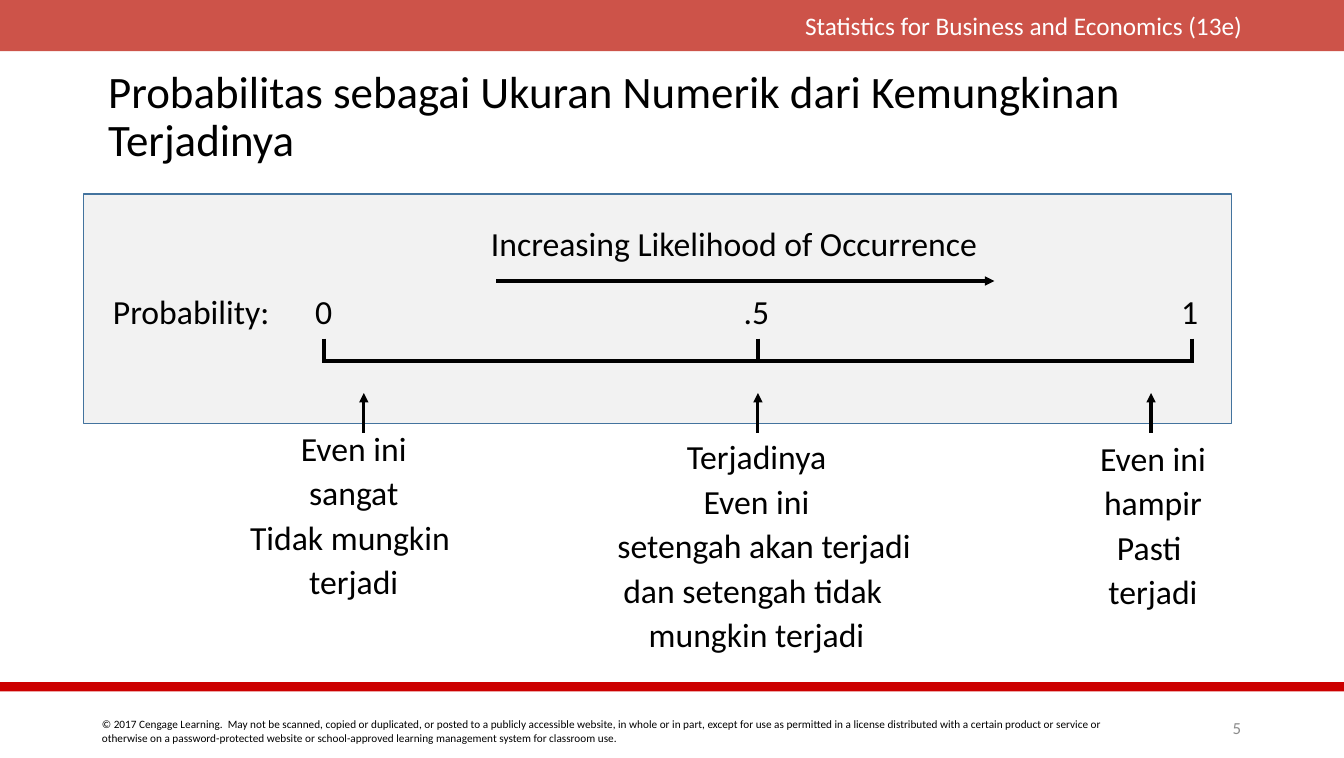
from lxml.etree import SubElement
from pptx import Presentation
from pptx.dml.color import RGBColor
from pptx.enum.shapes import MSO_CONNECTOR as Connector, MSO_SHAPE as Shape
from pptx.enum.text import MSO_ANCHOR as Anchor, PP_ALIGN as Align
from pptx.oxml.ns import qn
from pptx.util import Pt

SLIDE_WIDTH, SLIDE_HEIGHT = 957.6, 540


def color(hex_code):
    return RGBColor.from_string(hex_code)


class ScaleSlide:
    """Holds the style and the slide; lengths are in points."""
    font = "Calibri"
    ink = "000000"

    def __init__(self, slide):
        self.shapes = slide.shapes

    def rect(self, left, top, width, height, fill, outline=None, opacity=100):
        box = self.shapes.add_shape(Shape.RECTANGLE, Pt(left), Pt(top), Pt(width), Pt(height))
        box.shadow.inherit = False
        box.fill.solid()
        box.fill.fore_color.rgb = color(fill)
        if opacity < 100:
            tint = box.fill._xPr.find(qn("a:solidFill"))[0]
            SubElement(tint, qn("a:alpha"), val=str(opacity * 1000))
        if outline:
            box.line.color.rgb = color(outline)
            box.line.width = Pt(1)
        else:
            box.line.fill.background()

    def line(self, x1, y1, x2, y2, weight=3, arrow=False):
        rule = self.shapes.add_connector(Connector.STRAIGHT, Pt(x1), Pt(y1), Pt(x2), Pt(y2))
        rule.line.color.rgb = color(self.ink)
        rule.line.width = Pt(weight)
        if arrow:
            SubElement(rule.line._get_or_add_ln(), qn("a:tailEnd"), type="triangle")
        SubElement(rule._element.spPr, qn("a:effectLst"))

    def text(self, left, top, width, height, lines, size=24, ink=ink,
             align=Align.LEFT, anchor=Anchor.TOP, spacing=1.0, shifts=None):
        frame = self.shapes.add_textbox(Pt(left), Pt(top), Pt(width), Pt(height)).text_frame
        frame.word_wrap = True
        frame.vertical_anchor = anchor
        for index, words in enumerate(lines):
            paragraph = frame.add_paragraph() if index else frame.paragraphs[0]
            paragraph.alignment = align
            paragraph.line_spacing = spacing
            # A positive shift indents on the left, a negative one on the right
            shift = (shifts or {}).get(index, 0)
            margins = paragraph._p.get_or_add_pPr()
            margins.set("marL", str(Pt(max(shift, 0))))
            margins.set("marR", str(Pt(max(-shift, 0))))
            run = paragraph.add_run()
            run.text = words
            run.font.name = self.font
            run.font.size = Pt(size)
            run.font.color.rgb = color(ink)

    def caption(self, center_x, center_y, width, lines, shifts):
        height = 150
        self.text(center_x - width / 2, center_y - height / 2, width, height, lines,
                  align=Align.CENTER, anchor=Anchor.MIDDLE, spacing=1.1, shifts=shifts)


def main():
    deck = Presentation()
    deck.slide_width, deck.slide_height = Pt(SLIDE_WIDTH), Pt(SLIDE_HEIGHT)
    page = ScaleSlide(deck.slides.add_slide(deck.slide_layouts[6]))

    # Header band, footer rule and footer
    page.rect(0, 0, SLIDE_WIDTH, 36.5, "BF2317", opacity=78)
    page.text(490.3, 3.6, 401.8, 29, ["Statistics for Business and Economics (13e)"],
              size=18, ink="FFFFFF", align=Align.RIGHT)
    page.rect(0, 486, SLIDE_WIDTH, 6.5, "CC0000")
    page.text(65.5, 507.6, 741.6, 27, [
        "© 2017 Cengage Learning.  May not be scanned, copied or duplicated, or posted to a "
        "publicly accessible website, in whole or in part, except for use as permitted in a "
        "license distributed with a certain product or service or otherwise on a "
        "password-protected website or school-approved learning management system for "
        "classroom use."], size=8)
    page.text(842.4, 507.6, 49, 21.6, ["5"], size=12, ink="8C8C8C",
              align=Align.RIGHT, anchor=Anchor.MIDDLE)

    # Title
    page.text(70, 52, 814, 64,
              ["Probabilitas sebagai Ukuran Numerik dari Kemungkinan Terjadinya"],
              size=32, anchor=Anchor.MIDDLE, spacing=0.9)

    # Panel with the direction of likelihood
    page.rect(59.5, 138.2, 818, 163.5, "F2F2F2", outline="43739E")
    page.text(342.7, 155, 372, 36, ["Increasing Likelihood of Occurrence"])
    page.line(353.5, 200.2, 708.5, 200.2, weight=2.25, arrow=True)

    # Probability scale
    axis_start, axis_end, axis_y = 231, 849.2, 257
    page.text(73.4, 203.8, 149, 36, ["Probability:"])
    page.line(axis_start, axis_y, axis_end, axis_y)
    ticks = [("0", 217.4, 0), (".5", 522.7, 0.5), ("1", 834.5, 1)]
    for value, label_left, share in ticks:
        tick_x = axis_start + share * (axis_end - axis_start)
        page.line(tick_x, 241.2, tick_x, axis_y + 1.5)
        page.text(label_left, 203.8, 50, 36, [value])

    # Pointers and captions below the scale
    captions = [
        (259.2, 252, 365, 182,
         ["Even ini", "sangat", "Tidak mungkin", "terjadi"], {2: -5.4}),
        (540, 539, 387, 267,
         ["Terjadinya", "Even ini", "setengah akan terjadi",
          "dan setengah tidak", "mungkin terjadi"], {2: 10.8, 3: -5.4}),
        (820.1, 821.5, 372.3, 182,
         ["Even ini", "hampir", "Pasti", "terjadi"], {2: -5.4}),
    ]
    for pointer_x, center_x, center_y, width, lines, shifts in captions:
        page.line(pointer_x, 308.2, pointer_x, 280, weight=2.25, arrow=True)
        page.caption(center_x, center_y, width, lines, shifts)

    deck.save("out.pptx")


if __name__ == "__main__":
    main()
